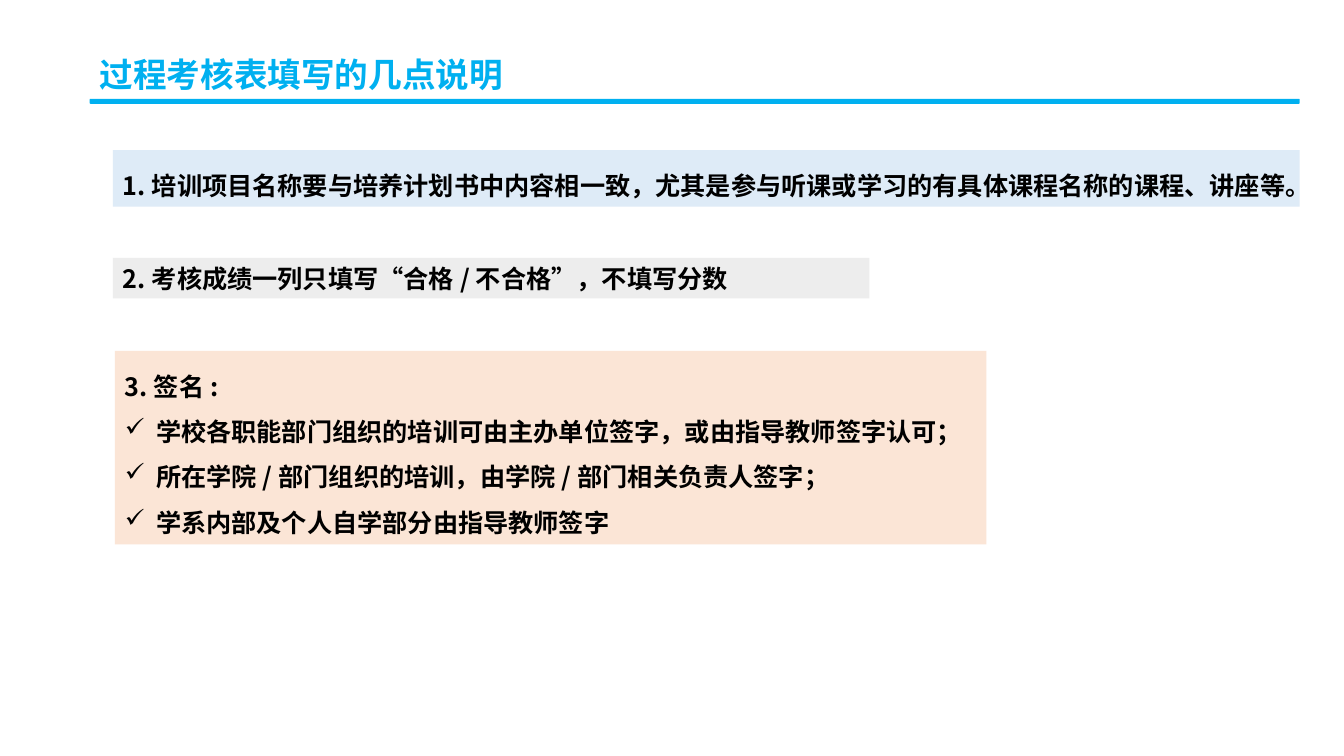
from dataclasses import dataclass
from typing import Any

from lxml.etree import SubElement as Sub
from pptx import Presentation
from pptx.dml.color import RGBColor as Rgb
from pptx.enum.shapes import MSO_SHAPE as Kind
from pptx.enum.text import MSO_ANCHOR as Anchor, MSO_AUTO_SIZE as Fit, PP_ALIGN as Align
from pptx.oxml.ns import qn
from pptx.util import Inches, Pt


@dataclass(frozen=True)
class Theme:
    font: str = "Noto Sans CJK SC"
    blue: str = "00B0F0"
    ink: str = "000000"
    sky: str = "DEEBF7"
    gray: str = "EDEDED"
    peach: str = "FBE5D6"
    head: int = 24
    body: int = 18


@dataclass(frozen=True)
class Line:
    text: str
    tick: bool = False


@dataclass(frozen=True)
class Note:
    left: float
    top: float
    width: float
    height: float
    fill: str
    lines: tuple[Line, ...]
    lead: float = 1.5


THEME = Theme()
INDENT = Inches(0.31)

NOTES = (
    Note(1.12, 1.49, 11.78, 0.56, THEME.sky, (
        Line("1.培训项目名称要与培养计划书中内容相一致，尤其是参与听课或学习的有具体课程名称的课程、讲座等。"),
    )),
    Note(1.12, 2.56, 7.51, 0.4, THEME.gray, (
        Line("2.考核成绩一列只填写“合格/不合格”，不填写分数"),
    ), 1.0),
    Note(1.14, 3.48, 8.65, 1.92, THEME.peach, (
        Line("3.签名:"),
        Line("学校各职能部门组织的培训可由主办单位签字，或由指导教师签字认可；", True),
        Line("所在学院/部门组织的培训，由学院/部门相关负责人签字；", True),
        Line("学系内部及个人自学部分由指导教师签字", True),
    )),
)


def apply(item: Any, form: dict[str, Any]) -> None:
    for name, value in form.items():
        setattr(item, name, value)


def place(shape: Any, left: float, top: float, width: float, height: float) -> None:
    apply(shape, {"left": Inches(left), "top": Inches(top),
                  "width": Inches(width), "height": Inches(height)})


def write(par: Any, text: str, size: int, color: str, lead: float) -> None:
    apply(par, {"alignment": Align.LEFT, "line_spacing": lead})
    run = par.add_run()
    run.text = text
    apply(run.font, {"name": THEME.font, "size": Pt(size), "bold": True})
    run.font.color.rgb = Rgb.from_string(color)
    Sub(run.font._element, qn("a:ea"), typeface=THEME.font)


def tick(par: Any) -> None:
    props = par._p.get_or_add_pPr()
    props.set("marL", str(INDENT))
    props.set("indent", str(-INDENT))
    Sub(props, qn("a:buChar"), char="✓")


def block(slide: Any, kind: Kind, box: tuple[float, ...], fill: str) -> Any:
    shape = slide.shapes.add_shape(kind, *map(Inches, box))
    shape.shadow.inherit = False
    shape.fill.solid()
    shape.fill.fore_color.rgb = Rgb.from_string(fill)
    shape.line.fill.background()
    return shape


def draw(slide: Any, note: Note) -> None:
    box = (note.left, note.top, note.width, note.height)
    frame = block(slide, Kind.RECTANGLE, box, note.fill).text_frame
    apply(frame, {"word_wrap": True, "vertical_anchor": Anchor.TOP,
                  "auto_size": Fit.SHAPE_TO_FIT_TEXT})
    for rank, line in enumerate(note.lines):
        par = frame.add_paragraph() if rank else frame.paragraphs[0]
        write(par, line.text, THEME.body, THEME.ink, note.lead)
        if line.tick:
            tick(par)


def main() -> None:
    deck = Presentation()
    apply(deck, {"slide_width": Inches(13.34), "slide_height": Inches(7.5)})
    slide = deck.slides.add_slide(deck.slide_layouts[5])

    title = slide.shapes.title
    place(title, 0.89, 0.48, 4.24, 0.5)
    apply(title.text_frame, {"word_wrap": False, "vertical_anchor": Anchor.TOP,
                             "auto_size": Fit.SHAPE_TO_FIT_TEXT})
    write(title.text_frame.paragraphs[0], "过程考核表填写的几点说明",
          THEME.head, THEME.blue, 1.0)

    block(slide, Kind.ROUNDED_RECTANGLE, (0.89, 0.98, 12.01, 0.05), THEME.blue)
    for note in NOTES:
        draw(slide, note)
    deck.save("out.pptx")


if __name__ == "__main__":
    main()
